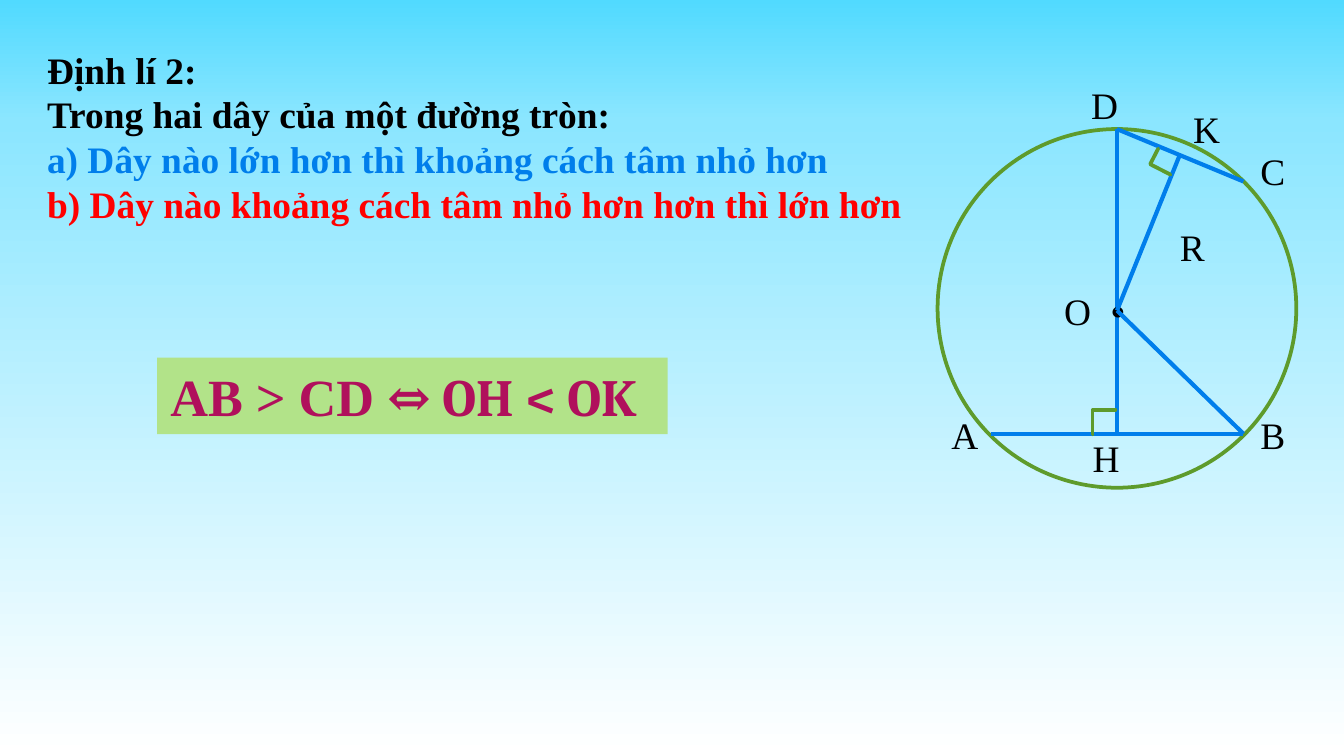
from copy import deepcopy
from dataclasses import dataclass
from typing import NamedTuple

from lxml import etree
from pptx import Presentation
from pptx.dml.color import RGBColor
from pptx.enum.shapes import MSO_CONNECTOR, MSO_SHAPE
from pptx.enum.text import MSO_ANCHOR, MSO_AUTO_SIZE
from pptx.oxml.ns import qn
from pptx.util import Cm, Pt

STRAIGHT = MSO_CONNECTOR.STRAIGHT
ELLIPSE = MSO_SHAPE.OVAL
HALF_FRAME = MSO_SHAPE.HALF_FRAME
RECTANGLE = MSO_SHAPE.RECTANGLE
MIDDLE = MSO_ANCHOR.MIDDLE
GROW = MSO_AUTO_SIZE.SHAPE_TO_FIT_TEXT


@dataclass(frozen=True)
class Theme:
    black: str = "000000"
    blue: str = "007EEB"
    red: str = "FF0000"
    green: str = "5E9B2C"
    formula: str = "B0105C"
    formula_back: str = "B2E389"
    sky: tuple = ((0, "51DAFF"), (0.16, "8BE6FF"), (1, "FFFFFF"))
    font: str = "Times New Roman"
    symbol_font: str = "Cambria"
    body: int = 20
    dot: int = 24
    large: int = 28
    outline: float = 2
    chord: float = 2.25


class Point(NamedTuple):
    """A position in centimetres."""
    x: float
    y: float


class Box(NamedTuple):
    """Left, top, width and height in centimetres."""
    x: float
    y: float
    width: float
    height: float


class Words(NamedTuple):
    text: str
    color: str
    size: int
    font: str
    bold: bool = False


THEME = Theme()

RADIUS = 3.39
D = Point(21.11, 2.44)
O = Point(D.x, 5.87)
H = Point(D.x, 8.2)
A = Point(18.72, H.y)
B = Point(2 * H.x - A.x, H.y)
C = Point(B.x, 3.43)
K = Point(22.3, 2.92)

LABELS = {
    "D": Point(20.37, 1.42),
    "C": Point(23.57, 2.67),
    "B": Point(23.57, 7.67),
    "A": Point(17.73, 7.67),
    "O": Point(19.86, 5.33),
    "H": Point(20.4, 8.1),
    "K": Point(22.3, 1.88),
    "R": Point(22.05, 4.11),
}

THEOREM = (
    ("Định lí 2:", THEME.black),
    ("Trong hai dây của một đường tròn:", THEME.black),
    ("a) Dây nào lớn hơn thì khoảng cách tâm nhỏ hơn", THEME.blue),
    ("b) Dây nào khoảng cách tâm nhỏ hơn hơn thì lớn hơn", THEME.red),
)


def rgb(color: str) -> RGBColor:
    return RGBColor.from_string(color)


def paint_sky(slide) -> None:
    """Fill the background with the three-stop gradient, top to bottom."""
    fill = slide.background.fill
    fill.gradient()
    fill.gradient_angle = 270
    stops = slide.element.find(".//" + qn("a:gsLst"))
    stops.append(deepcopy(stops[-1]))
    for stop, (position, color) in zip(fill.gradient_stops, THEME.sky):
        stop.position = position
        stop.color.rgb = rgb(color)


def add_words(paragraph, words: Words) -> None:
    run = paragraph.add_run()
    run.text = words.text
    run.font.name = words.font
    run.font.size = Pt(words.size)
    run.font.bold = words.bold
    run.font.color.rgb = rgb(words.color)


def add_text(shapes, box: Box, lines: list[Words]) -> None:
    """Add an unwrapped text box with one paragraph per line."""
    frame = shapes.add_textbox(*map(Cm, box)).text_frame
    frame.word_wrap = False
    frame.auto_size = GROW
    for index, words in enumerate(lines):
        add_words(frame.add_paragraph() if index else frame.paragraphs[0], words)


def add_segment(shapes, start: Point, end: Point) -> None:
    segment = shapes.add_connector(STRAIGHT, *map(Cm, start + end))
    segment.line.color.rgb = rgb(THEME.blue)
    segment.line.width = Pt(THEME.chord)
    etree.SubElement(segment.element.spPr, qn("a:effectLst"))


def add_outline(shapes, kind, box: Box):
    """Add an unfilled shape with the green outline."""
    outline = shapes.add_shape(kind, *map(Cm, box))
    outline.shadow.inherit = False
    outline.fill.background()
    outline.line.color.rgb = rgb(THEME.green)
    outline.line.width = Pt(THEME.outline)
    return outline


def add_right_angle(shapes, box: Box, rotation: float = 0) -> None:
    corner = add_outline(shapes, HALF_FRAME, box)
    corner.adjustments[0] = 0
    corner.adjustments[1] = 0
    corner.rotation = rotation


def draw_circle_figure(shapes) -> None:
    add_outline(shapes, ELLIPSE, Box(D.x - RADIUS, D.y, 2 * RADIUS, 2 * RADIUS))
    for start, end in ((D, C), (A, B), (D, H)):
        add_segment(shapes, start, end)
    add_text(shapes, Box(20.73, 5.21, 0.81, 1.27),
             [Words("•", THEME.black, THEME.dot, THEME.font)])
    for end in (B, K):
        add_segment(shapes, O, end)
    for letter, corner in LABELS.items():
        add_text(shapes, Box(*corner, 1.04, 1.12),
                 [Words(letter, THEME.black, THEME.body, THEME.font)])
    add_right_angle(shapes, Box(20.65, 7.75, 0.43, 0.46))
    add_right_angle(shapes, Box(21.84, 2.84, 0.33, 0.43), 297.1)


def draw_formula(shapes) -> None:
    panel = shapes.add_shape(RECTANGLE, *map(Cm, Box(2.97, 6.76, 9.65, 1.45)))
    panel.shadow.inherit = False
    panel.fill.solid()
    panel.fill.fore_color.rgb = rgb(THEME.formula_back)
    panel.line.fill.background()
    frame = panel.text_frame
    frame.word_wrap = True
    frame.vertical_anchor = MIDDLE
    paragraph = frame.paragraphs[0]
    paragraph.alignment = 1
    for text, font in (("AB > CD ", THEME.font), ("⇔ OH < OK", THEME.symbol_font)):
        add_words(paragraph, Words(text, THEME.formula, THEME.large, font, True))


def main() -> None:
    deck = Presentation()
    deck.slide_width, deck.slide_height = Cm(25.4), Cm(14.29)
    slide = deck.slides.add_slide(deck.slide_layouts[6])
    paint_sky(slide)
    draw_circle_figure(slide.shapes.add_group_shape().shapes)
    add_text(slide.shapes, Box(0.64, 0.76, 16.79, 3.68),
             [Words(text, color, THEME.body, THEME.font, True)
              for text, color in THEOREM])
    draw_formula(slide.shapes)
    deck.save("out.pptx")


if __name__ == "__main__":
    main()
